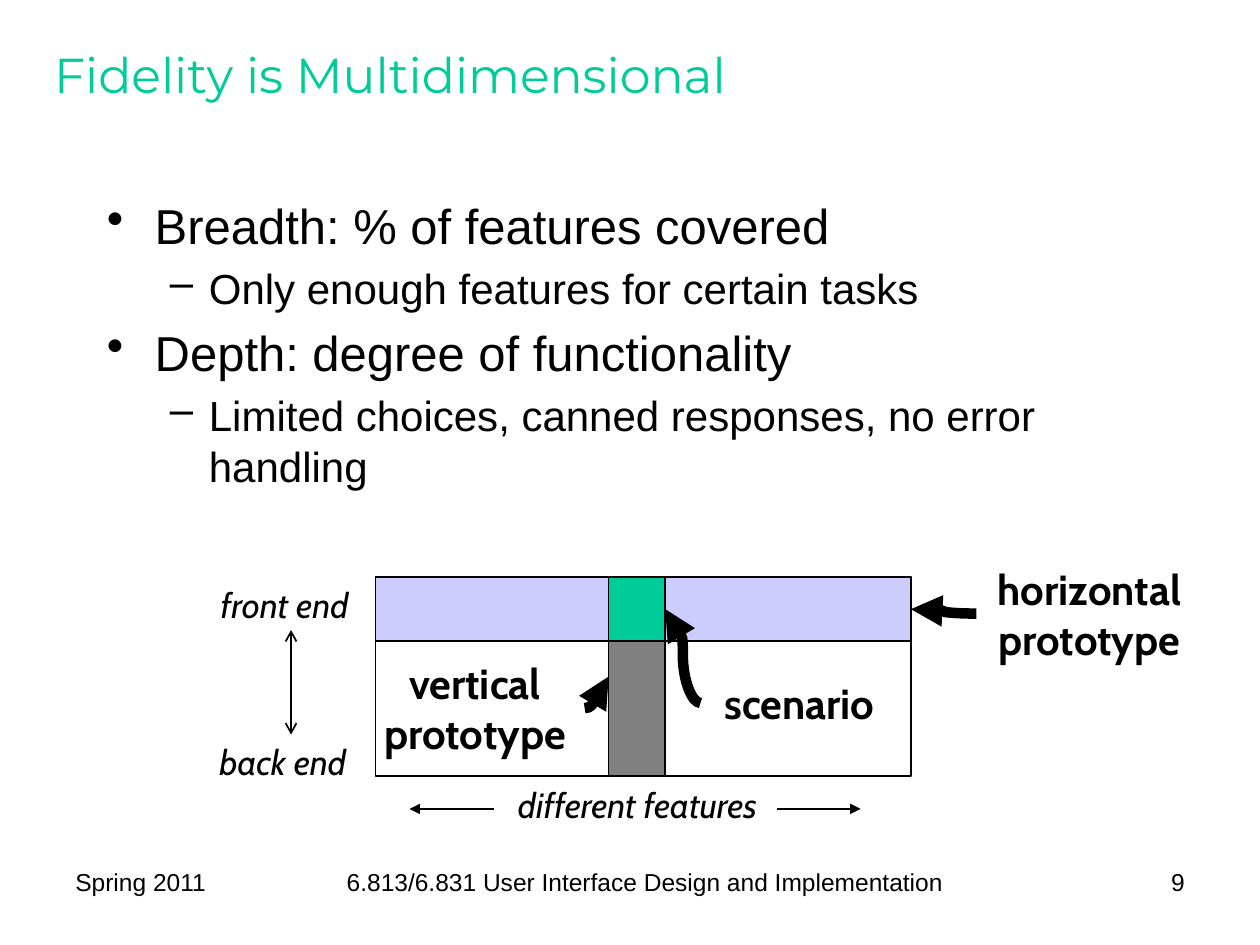
from lxml.etree import SubElement
from pptx import Presentation
from pptx.dml.color import RGBColor
from pptx.enum.shapes import MSO_CONNECTOR, MSO_SHAPE
from pptx.enum.text import MSO_ANCHOR, MSO_AUTO_SIZE, PP_ALIGN
from pptx.oxml.ns import qn
from pptx.util import Inches, Pt

BLACK, WHITE, GREEN, LILAC, GREY = "000000", "FFFFFF", "00CC99", "CCCCFF", "808080"
TOP, LEFT, BOTTOM, RIGHT = range(4)

BODY = {"name": "Arial", "size": Pt(28)}
SUBPOINT = {"name": "Arial", "size": Pt(24)}
FOOTER = {"name": "Arial", "size": Pt(14)}
CALLOUT = {"name": "Cabin", "size": Pt(24), "bold": True}
AXIS = {"name": "Cabin", "size": Pt(20), "italic": True}


def rgb(value):
    return RGBColor.from_string(value)


def write(para, text, style, color=BLACK, align=PP_ALIGN.LEFT):
    para.text = text
    para.alignment = align
    for span in para.runs:
        for key, value in style.items():
            setattr(span.font, key, value)
        span.font.color.rgb = rgb(color)


def add_title(page, text):
    title = page.shapes.title
    place = {"left": 0.33, "top": 0.17, "width": 9.25, "height": 0.83}
    for key, value in place.items():
        setattr(title, key, Inches(value))
    title.text_frame.vertical_anchor = MSO_ANCHOR.MIDDLE
    write(title.text_frame.paragraphs[0], text,
          {"name": "Montserrat", "size": Pt(28)}, GREEN)


def add_text(page, text, at, style, align=PP_ALIGN.LEFT, wrap=True):
    box = page.shapes.add_textbox(*map(Inches, at))
    box.text_frame.word_wrap = wrap
    if not wrap:
        box.text_frame.auto_size = MSO_AUTO_SIZE.SHAPE_TO_FIT_TEXT
    write(box.text_frame.paragraphs[0], text, style, align=align)
    return box


def add_label(page, text, at, style):
    return add_text(page, text, at, style, PP_ALIGN.CENTER, wrap=False)


def add_bullets(page, items, at):
    # Format per level: text style, bullet, left margin, hanging indent
    levels = [(BODY, "•", 0.38, 0.38), (SUBPOINT, "–", 0.81, 0.31)]
    frame = page.shapes.add_textbox(*map(Inches, at)).text_frame
    frame.word_wrap = True
    for index, (level, text) in enumerate(items):
        style, mark, margin, hanging = levels[level]
        para = frame.add_paragraph() if index else frame.paragraphs[0]
        write(para, text, style)
        para.level = level
        para.space_before = Pt(style["size"].pt * 0.2)
        props = para._p.get_or_add_pPr()
        props.set("marL", str(Inches(margin)))
        props.set("indent", str(-Inches(hanging)))
        SubElement(props, qn("a:buChar")).set("char", mark)


def add_block(page, at, color):
    block = page.shapes.add_shape(MSO_SHAPE.RECTANGLE, *map(Inches, at))
    block.shadow.inherit = False
    block.fill.solid()
    block.fill.fore_color.rgb = rgb(color)
    block.line.color.rgb = rgb(BLACK)
    block.line.width = Pt(1)
    return block


def add_arrow(page, start, end, kind=MSO_CONNECTOR.STRAIGHT, width=1, **ends):
    arrow = page.shapes.add_connector(kind, *map(Inches, start + end))
    arrow.line.color.rgb = rgb(BLACK)
    arrow.line.width = Pt(width)
    line = arrow.line._get_or_add_ln()
    for tag in ("headEnd", "tailEnd"):
        if tag in ends:
            SubElement(line, qn("a:" + tag)).set("type", ends[tag])
    SubElement(arrow._element.spPr, qn("a:effectLst"))
    return arrow


def add_pointer(page, label, label_side, block, block_side):
    arrow = add_arrow(page, (0, 0), (1, 1), MSO_CONNECTOR.CURVE, 6,
                      tailEnd="triangle")
    arrow.begin_connect(label, label_side)
    arrow.end_connect(block, block_side)


def add_diagram(page):
    # Features run across, layers run down; the two strips cross
    left, top, width, height = 2.98, 4.58, 4.25, 1.58
    strip_left, strip_width, strip_height = 4.83, 0.45, 0.51
    add_block(page, (left, top, width, height), WHITE)
    horizontal = add_block(page, (left, top, width, strip_height), LILAC)
    vertical = add_block(page, (strip_left, top, strip_width, height), GREY)
    crossing = add_block(page, (strip_left, top, strip_width, strip_height), GREEN)

    # Callouts and their curved pointers
    callouts = [
        ("horizontal\vprototype", (7.75, 4.42, 1.79, 0.9), LEFT, horizontal, RIGHT),
        ("vertical\vprototype", (2.9, 5.17, 1.74, 0.9), RIGHT, vertical, LEFT),
        ("scenario", (5.56, 5.33, 1.57, 0.5), LEFT, crossing, RIGHT),
    ]
    for text, at, label_side, block, block_side in callouts:
        label = add_label(page, text, at, CALLOUT)
        add_pointer(page, label, label_side, block, block_side)

    # Axis labels and arrows
    add_label(page, "front end", (1.61, 4.58, 1.3, 0.43), AXIS)
    add_label(page, "back end", (1.58, 5.83, 1.33, 0.43), AXIS)
    add_label(page, "different features", (3.92, 6.17, 2.28, 0.43), AXIS)
    add_arrow(page, (2.31, 5.83), (2.31, 5), headEnd="arrow", tailEnd="arrow")
    for start, end in ((3.92, 3.25), (6.17, 6.83)):
        add_arrow(page, (start, 6.42), (end, 6.42), tailEnd="triangle")


def add_footer(page):
    top, height = 6.83, 0.52
    for text, left, width, align in (
        ("Spring 2011", 0.5, 1.5, PP_ALIGN.LEFT),
        ("6.813/6.831 User Interface Design and Implementation",
         2.08, 6.08, PP_ALIGN.CENTER),
        ("9", 8.25, 1.25, PP_ALIGN.RIGHT),
    ):
        add_text(page, text, (left, top, width, height), FOOTER, align)


def main():
    deck = Presentation()
    deck.slide_width, deck.slide_height = Inches(10), Inches(7.5)
    page = deck.slides.add_slide(deck.slide_layouts[5])
    add_title(page, "Fidelity is Multidimensional")
    add_bullets(page, [
        (0, "Breadth: % of features covered"),
        (1, "Only enough features for certain tasks"),
        (0, "Depth: degree of functionality"),
        (1, "Limited choices, canned responses, no error handling"),
    ], (0.75, 1.5, 8.5, 5.17))
    add_footer(page)
    add_diagram(page)
    deck.save("out.pptx")


if __name__ == "__main__":
    main()
